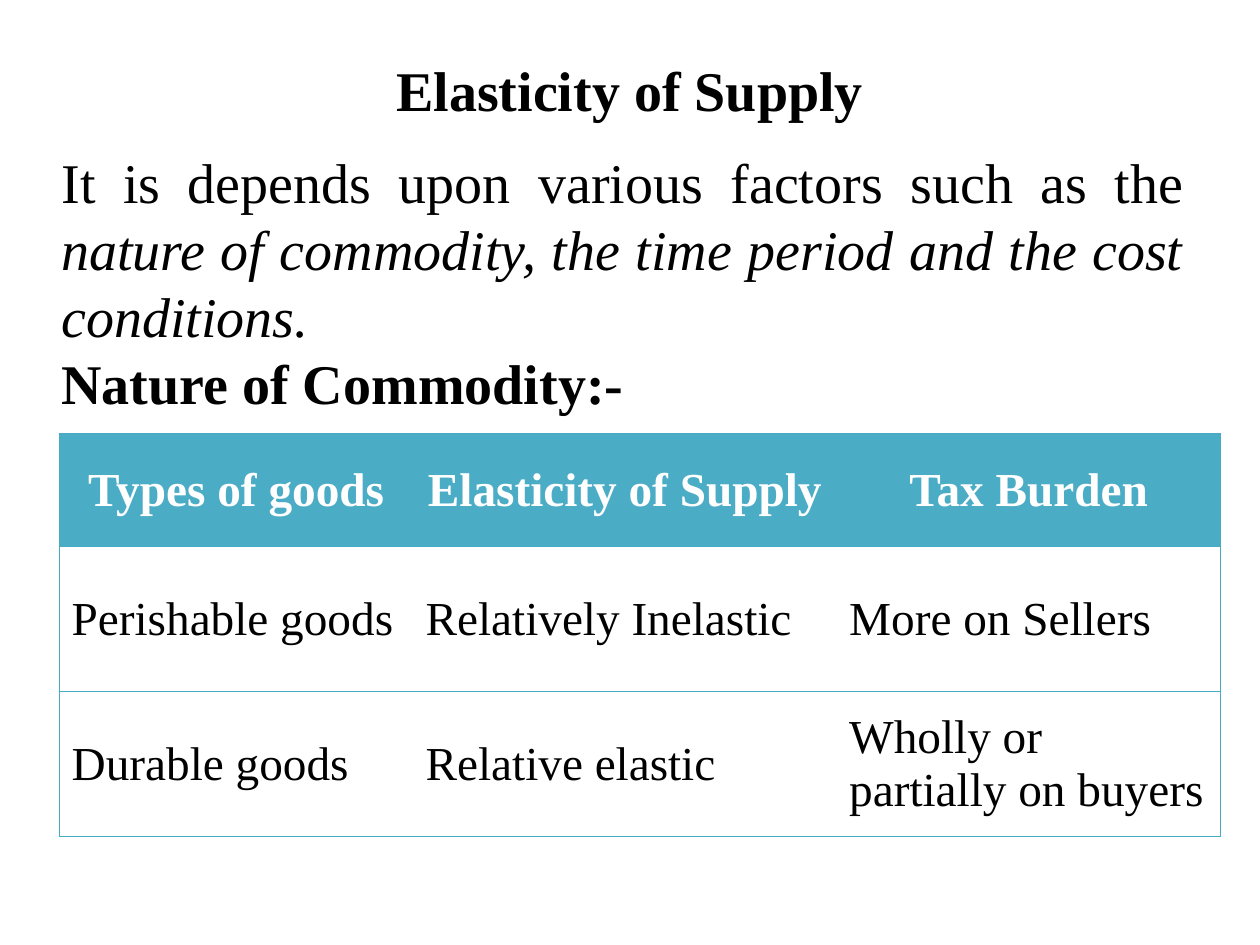
from lxml import etree
from pptx import Presentation
from pptx.dml.color import RGBColor
from pptx.enum import text
from pptx.oxml import ns
from pptx.util import Pt

HUES = {"ink": "000000", "paper": "FFFFFF", "head": "4BACC6", "rule": "46AAC5"}
FONT = "Times New Roman"
ALIGN = text.PP_ALIGN


def add_run(para, words, size, hue="ink", bold=False, italic=False):
    run = para.add_run()
    run.text = words
    font = run.font
    font.name, font.size, font.bold, font.italic = FONT, Pt(size), bold, italic
    font.color.rgb = RGBColor.from_string(HUES[hue])


def set_edge(cell, side, shown):
    """Draw one cell border, or clear it."""
    line = etree.SubElement(cell._tc.get_or_add_tcPr(), ns.qn("a:ln" + side), w=str(Pt(0.75)))
    if shown:
        fill = etree.SubElement(line, ns.qn("a:solidFill"))
        etree.SubElement(fill, ns.qn("a:srgbClr"), val=HUES["rule"])
    else:
        etree.SubElement(line, ns.qn("a:noFill"))


deck = Presentation()
deck.slide_width, deck.slide_height = Pt(720), Pt(540)
slide = deck.slides.add_slide(deck.slide_layouts[5])

# Title
title = slide.shapes.title
title.left, title.top, title.width, title.height = Pt(36), Pt(11.5), Pt(648), Pt(78.5)
title.text_frame.vertical_anchor = text.MSO_ANCHOR.MIDDLE
para = title.text_frame.paragraphs[0]
para.alignment = ALIGN.CENTER
add_run(para, "Elasticity of Supply", 32, bold=True)

# Table
rows = [
    ["Types of goods", "Elasticity of Supply", "Tax Burden"],
    ["Perishable goods", "Relatively Inelastic", "More on Sellers"],
    ["Durable goods", "Relative elastic", "Wholly or partially on buyers"],
]
widths = [202.3, 242, 219.5]
heights = [64.8, 82.8, 82.8]
table = slide.shapes.add_table(3, 3, Pt(33.8), Pt(247.7), Pt(sum(widths)), Pt(sum(heights))).table
table.horz_banding = False
for col, width in zip(table.columns, widths):
    col.width = Pt(width)
for row, height in zip(table.rows, heights):
    row.height = Pt(height)

for r, row in enumerate(rows):
    head = r == 0
    for c, words in enumerate(row):
        cell = table.cell(r, c)
        edges = {"L": c == 0, "R": c == 2, "T": True, "B": True}
        for side, shown in edges.items():
            set_edge(cell, side, shown)
        cell.fill.solid()
        cell.fill.fore_color.rgb = RGBColor.from_string(HUES["head" if head else "paper"])
        cell.vertical_anchor = text.MSO_ANCHOR.MIDDLE
        para = cell.text_frame.paragraphs[0]
        para.alignment = ALIGN.CENTER if head else ALIGN.LEFT
        add_run(para, words, 27, "paper" if head else "ink", bold=head)

# Body text
body = slide.shapes.add_textbox(Pt(28), Pt(81), Pt(656), Pt(438.5)).text_frame
body.word_wrap = True
intro, topic = body.paragraphs[0], body.add_paragraph()
for para in (intro, topic):
    para.alignment = ALIGN.JUSTIFY
    para.line_spacing = Pt(38.3)
add_run(intro, "It is depends upon various factors such as the ", 32)
add_run(intro, "nature of commodity, the time period and the cost conditions.", 32, italic=True)
add_run(topic, "Nature of Commodity:-", 32, bold=True)

deck.save("out.pptx")
